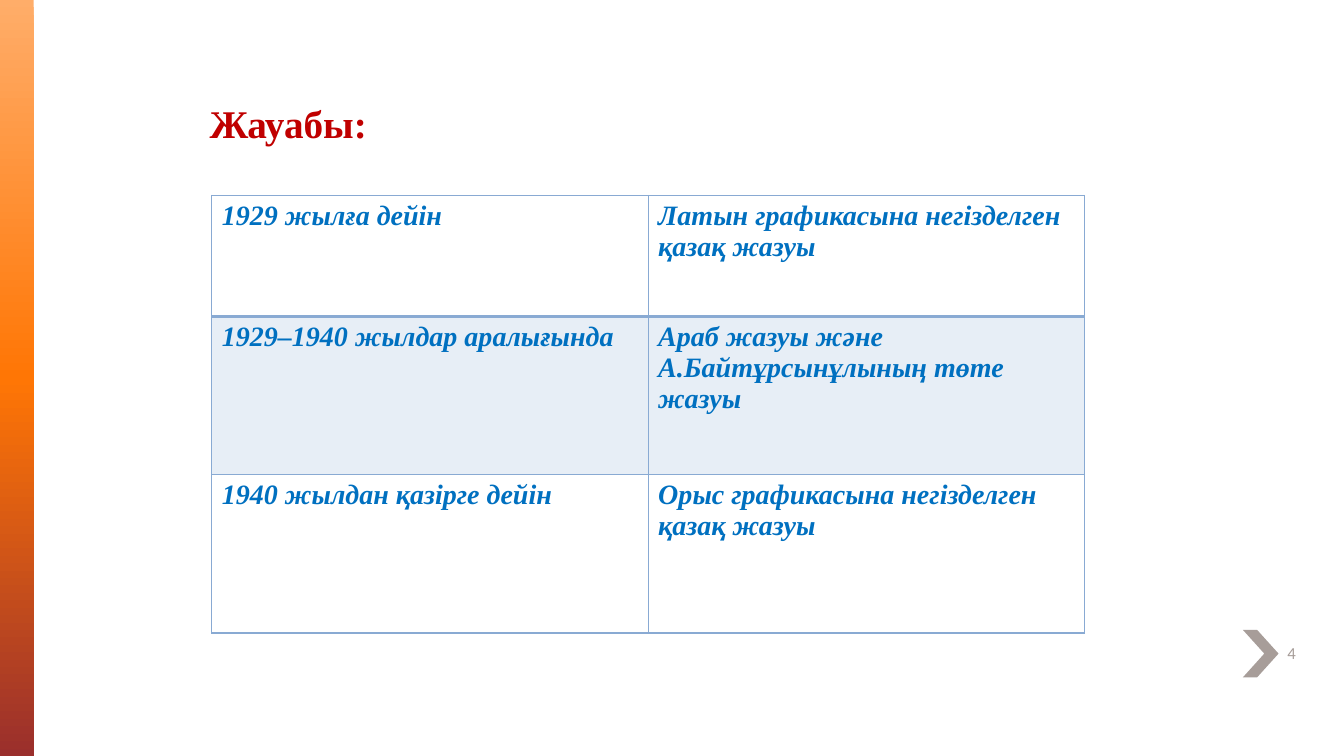
from lxml.etree import SubElement
from pptx import Presentation
from pptx.dml.color import RGBColor
from pptx.enum.shapes import MSO_SHAPE
from pptx.enum.text import MSO_ANCHOR, MSO_AUTO_SIZE, PP_ALIGN
from pptx.oxml.ns import qn
from pptx.util import Inches, Pt

RED = RGBColor(0xC0, 0x00, 0x00)
BLUE = RGBColor(0x00, 0x70, 0xC0)
STEEL = RGBColor(0x89, 0xAA, 0xD3)
TAUPE = RGBColor(0xA7, 0x9D, 0x99)
PEACH = RGBColor(0xFF, 0xAD, 0x69)
ORANGE = RGBColor(0xFF, 0x76, 0x05)
BRICK = RGBColor(0x9A, 0x2F, 0x2C)

PERIODS = [
    ("1929 жылға дейін", "Латын графикасына негізделген қазақ жазуы"),
    ("1929–1940 жылдар аралығында", "Араб жазуы және А.Байтұрсынұлының төте жазуы"),
    ("1940 жылдан қазірге дейін", "Орыс графикасына негізделген қазақ жазуы"),
]
ROW_HEIGHTS = [16, 20.93, 20.93]


class SlideBuilder:
    serif = "Times New Roman"
    sans = "Calibri"

    def __init__(self, presentation):
        self.width = presentation.slide_width
        self.height = presentation.slide_height
        self.slide = presentation.slides.add_slide(presentation.slide_layouts[5])

    def across(self, percent):
        return round(self.width * percent / 100)

    def down(self, percent):
        return round(self.height * percent / 100)

    def frame(self, left, top, width, height):
        return self.across(left), self.down(top), self.across(width), self.down(height)

    def add_text(self, text_frame, text, size, color, font, bold=False, italic=False):
        text_frame.word_wrap = True
        paragraph = text_frame.paragraphs[0]
        paragraph.alignment = PP_ALIGN.LEFT
        run = paragraph.add_run()
        run.text = text
        run.font.size = Pt(size)
        run.font.name = font
        run.font.bold = bold
        run.font.italic = italic
        run.font.color.rgb = color

    def title(self, text, *area):
        shape = self.slide.shapes.title
        shape.left, shape.top, shape.width, shape.height = self.frame(*area)
        shape.text_frame.auto_size = MSO_AUTO_SIZE.NONE
        shape.text_frame.vertical_anchor = MSO_ANCHOR.MIDDLE
        self.add_text(shape.text_frame, text, 28, RED, self.serif, bold=True)

    def label(self, text, *area):
        shape = self.slide.shapes.add_textbox(*self.frame(*area))
        shape.text_frame.vertical_anchor = MSO_ANCHOR.MIDDLE
        self.add_text(shape.text_frame, text, 12, TAUPE, self.sans)

    def shape(self, kind, *area):
        shape = self.slide.shapes.add_shape(kind, *self.frame(*area))
        shape.shadow.inherit = False
        shape.line.fill.background()
        return shape

    def gradient_bar(self, stops, *area):
        shape = self.shape(MSO_SHAPE.RECTANGLE, *area)
        shape.fill.gradient()
        shape.fill.gradient_angle = 270
        stop_list = shape.element.spPr.find(qn("a:gradFill")).find(qn("a:gsLst"))
        for stop in list(stop_list):
            stop_list.remove(stop)
        for position, color in stops:
            stop = SubElement(stop_list, qn("a:gs"), pos=str(position * 1000))
            SubElement(stop, qn("a:srgbClr"), val=str(color))

    def chevron(self, color, *area):
        shape = self.shape(MSO_SHAPE.CHEVRON, *area)
        shape.adjustments[0] = 0.6
        shape.fill.solid()
        shape.fill.fore_color.rgb = color

    def border(self, cell, side, points):
        properties = cell._tc.get_or_add_tcPr()
        line = SubElement(properties, qn(f"a:ln{side}"), w=str(int(Pt(points))))
        fill = SubElement(line, qn("a:solidFill"))
        SubElement(fill, qn("a:srgbClr"), val=str(STEEL))

    def tint(self, cell, color, opacity):
        cell.fill.solid()
        cell.fill.fore_color.rgb = color
        swatch = cell._tc.tcPr.find(qn("a:solidFill"))[0]
        SubElement(swatch, qn("a:alpha"), val=str(opacity * 1000))

    def table(self, rows, heights, left, top, width):
        area = self.frame(left, top, width, sum(heights))
        table = self.slide.shapes.add_table(len(rows), len(rows[0]), *area).table
        table.first_row = False
        table.horz_banding = False
        for row, height in zip(table.rows, heights):
            row.height = self.down(height)
        for row_index, texts in enumerate(rows):
            for column_index, text in enumerate(texts):
                cell = table.cell(row_index, column_index)
                self.add_text(cell.text_frame, text, 20, BLUE, self.serif, True, True)
                self.border(cell, "L", 1)
                self.border(cell, "R", 1)
                self.border(cell, "T", 2 if row_index == 1 else 1)
                self.border(cell, "B", 2 if row_index == 0 else 1)
                if row_index % 2:
                    self.tint(cell, STEEL, 20)
                else:
                    cell.fill.background()


def main():
    presentation = Presentation()
    presentation.slide_width = Inches(13.33)
    presentation.slide_height = Inches(7.5)
    builder = SlideBuilder(presentation)
    builder.gradient_bar([(0, PEACH), (50, ORANGE), (100, BRICK)], 0, 0, 2.5, 100)
    builder.chevron(TAUPE, 92.48, 83.33, 2.65, 6.27)
    builder.title("Жауабы:", 14.85, 12.2, 66.25, 8)
    builder.label("4", 95.05, 83.73, 4.2, 5.33)
    builder.table(PERIODS, ROW_HEIGHTS, 15.75, 25.87, 64.95)
    presentation.save("out.pptx")


if __name__ == "__main__":
    main()
